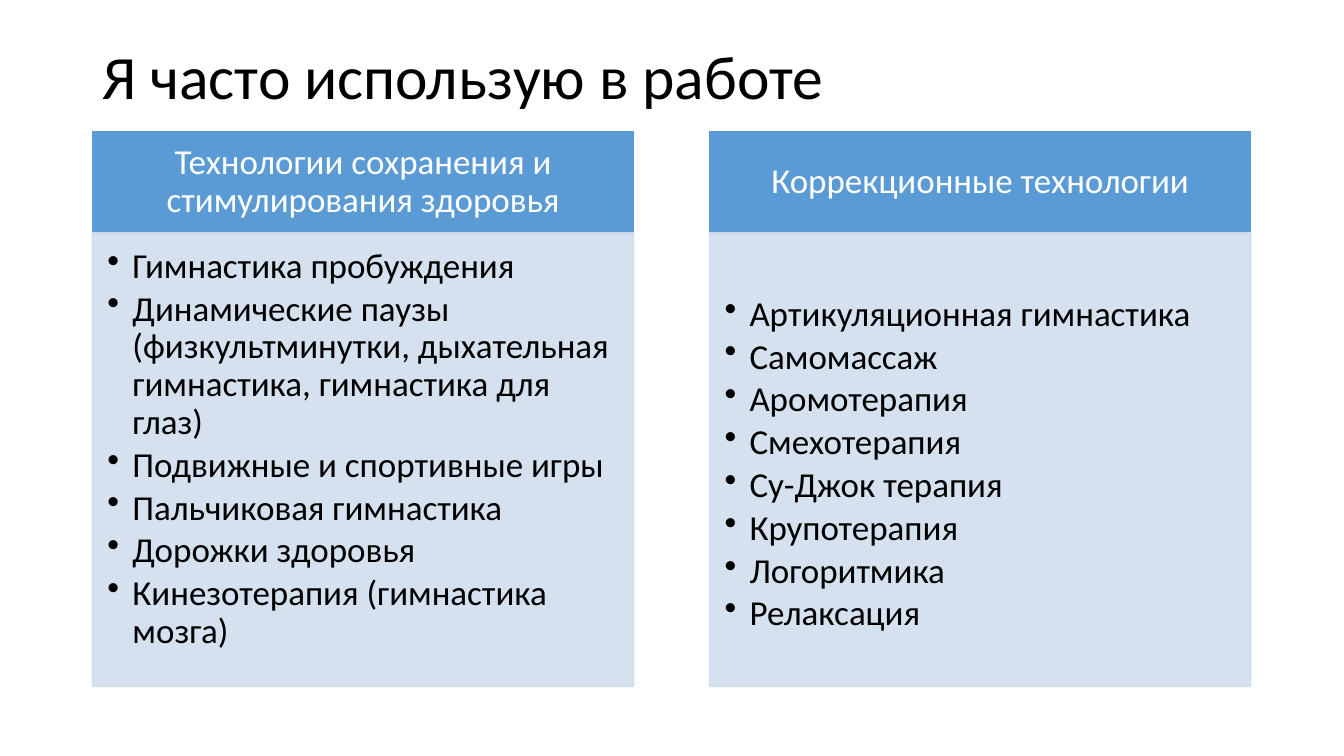
from lxml.etree import SubElement
from pptx import Presentation
from pptx.dml.color import RGBColor
from pptx.enum.shapes import MSO_SHAPE
from pptx.enum.text import MSO_ANCHOR, PP_ALIGN
from pptx.oxml.ns import qn
from pptx.util import Cm, Pt

HUES = {"head": "5B9BD5", "body": "D2DEEF", "dark": "000000", "light": "FFFFFF"}


def write(shape, lines, size=25, hue="dark", align=PP_ALIGN.LEFT,
          anchor=MSO_ANCHOR.MIDDLE, pad=(0.25, 0.13, 0.25, 0.13),
          bullet=False, after=0):
    """Fill a shape with one paragraph per line; pad is left, top, right, bottom in cm."""
    frame = shape.text_frame
    frame.word_wrap = True
    frame.vertical_anchor = anchor
    (frame.margin_left, frame.margin_top,
     frame.margin_right, frame.margin_bottom) = [Cm(p) for p in pad]
    for i, line in enumerate(lines):
        para = frame.paragraphs[0] if i == 0 else frame.add_paragraph()
        para.alignment = align
        para.line_spacing = 0.9
        para.space_before = Pt(0)
        para.space_after = Pt(after)
        if bullet:
            props = para._p.get_or_add_pPr()
            props.set("marL", str(Cm(0.63)))
            props.set("indent", str(-Cm(0.63)))
            SubElement(props, qn("a:buChar")).set("char", "•")
        run = para.add_run()
        run.text = line
        run.font.size = Pt(size)
        run.font.name = "Calibri"
        run.font.color.rgb = RGBColor.from_string(HUES[hue])


def panel(left, top, width, height, hue, alpha=None):
    """Add a flat rectangle, sizes in cm, with an outline of the same colour."""
    box = slide.shapes.add_shape(MSO_SHAPE.RECTANGLE, Cm(left), Cm(top),
                                 Cm(width), Cm(height))
    box.shadow.inherit = False
    box.fill.solid()
    box.fill.fore_color.rgb = RGBColor.from_string(HUES[hue])
    box.line.color.rgb = RGBColor.from_string(HUES[hue])
    box.line.width = Pt(1)
    if alpha:
        for color in list(box._element.spPr.iter(qn("a:srgbClr"))):
            SubElement(color, qn("a:alpha")).set("val", str(alpha * 1000))
    return box


deck = Presentation()
deck.slide_width, deck.slide_height = Cm(33.87), Cm(19.05)
slide = deck.slides.add_slide(deck.slide_layouts[5])

# Title
title = slide.shapes.title
title.left, title.top, title.width, title.height = Cm(2.33), Cm(1.02), Cm(29.21), Cm(1.98)
write(title, ["Я часто использую в работе"], size=44)

# Columns: heading, top padding of the list, list items
cols = [
    ("Технологии сохранения и стимулирования здоровья", 0.38, [
        "Гимнастика пробуждения",
        "Динамические паузы (физкультминутки, дыхательная гимнастика, гимнастика для глаз)",
        "Подвижные и спортивные игры",
        "Пальчиковая гимнастика",
        "Дорожки здоровья",
        "Кинезотерапия (гимнастика мозга)",
    ]),
    ("Коррекционные технологии", 1.59, [
        "Артикуляционная гимнастика",
        "Самомассаж",
        "Аромотерапия",
        "Смехотерапия",
        "Су-Джок терапия",
        "Крупотерапия",
        "Логоритмика",
        "Релаксация",
    ]),
]
for i, (name, gap, items) in enumerate(cols):
    left = 2.33 + i * 15.55
    head = panel(left, 3.33, 13.64, 2.54, "head")
    write(head, [name], hue="light", align=PP_ALIGN.CENTER, pad=(0.48, 0.28, 0.48, 0.28))
    body = panel(left, 5.87, 13.64, 11.43, "body", alpha=90)
    write(body, items, anchor=MSO_ANCHOR.TOP, pad=(0.38, gap, 0.48, 0.56),
          bullet=True, after=3.6)

deck.save("out.pptx")
